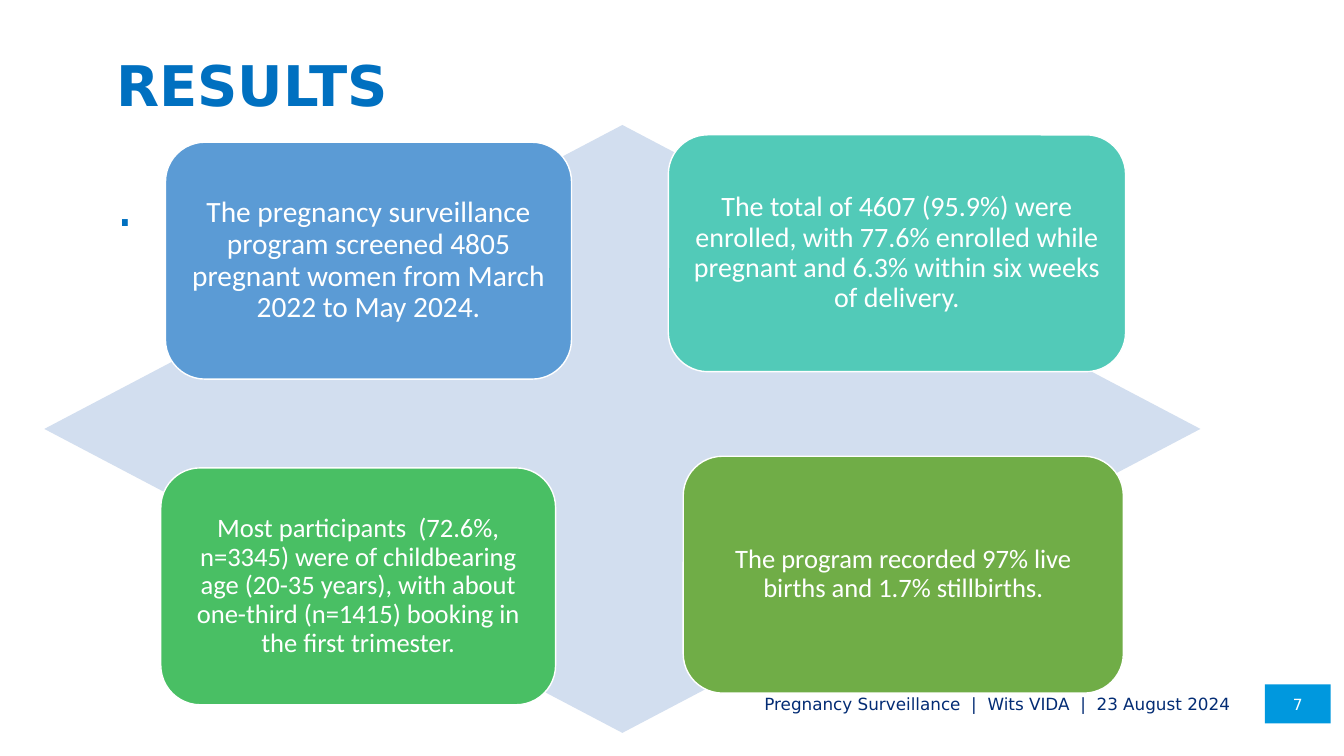
from dataclasses import dataclass

from pptx import Presentation
from pptx.dml.color import RGBColor
from pptx.enum.shapes import MSO_SHAPE
from pptx.enum.text import MSO_ANCHOR, MSO_AUTO_SIZE, PP_ALIGN
from pptx.util import Pt


@dataclass(frozen=True)
class Theme:
    heading_font: str = "DejaVu Sans"
    card_font: str = "Calibri"
    title: str = "0070C0"
    footer: str = "032C74"
    number_fill: str = "0098DE"
    diamond: str = "D2DEEF"
    white: str = "FFFFFF"
    title_size: float = 40
    footer_size: float = 12
    number_size: float = 11


THEME = Theme()

# Offset from the diamond's corner, width, fill, text size, wording
CARDS = [
    (86.5, 12.3, 290, "5B9BD5", 21,
     "The pregnancy surveillance program screened 4805 pregnant women "
     "from March 2022 to May 2024."),
    (445.7, 7, 326.6, "52CAB8", 20,
     "The total of 4607 (95.9%) were enrolled, with 77.6% enrolled while "
     "pregnant and 6.3% within six weeks of delivery."),
    (83.2, 244.9, 282, "49BF64", 19,
     "Most participants  (72.6%, n=3345) were of childbearing age "
     "(20-35 years), with about one-third (n=1415) booking in the first "
     "trimester."),
    (456.3, 236.6, 314.4, "70AD47", 19,
     "The program recorded 97% live births and 1.7% stillbirths."),
]
CARD_HEIGHT = 169.2


def write(frame, text, *, size, color, font=THEME.heading_font, bold=False,
          align=PP_ALIGN.LEFT, anchor=MSO_ANCHOR.MIDDLE, inset=0,
          line_spacing=1.0, space_before=0, append=False):
    """Fill a text frame with one paragraph, or append one to it."""
    frame.word_wrap = True
    frame.auto_size = MSO_AUTO_SIZE.NONE
    frame.vertical_anchor = anchor
    frame.margin_left = frame.margin_right = Pt(inset)
    frame.margin_top = frame.margin_bottom = Pt(inset)
    paragraph = frame.add_paragraph() if append else frame.paragraphs[0]
    paragraph.alignment = align
    paragraph.line_spacing = line_spacing
    paragraph.space_before = Pt(space_before)
    run = paragraph.add_run()
    run.text = text
    run.font.name = font
    run.font.size = Pt(size)
    run.font.bold = bold
    run.font.color.rgb = RGBColor.from_string(color)


def add_block(slide, preset, box, fill, outline=None):
    block = slide.shapes.add_shape(preset, *map(Pt, box))
    block.shadow.inherit = False
    block.fill.solid()
    block.fill.fore_color.rgb = RGBColor.from_string(fill)
    if outline:
        block.line.color.rgb = RGBColor.from_string(outline)
        block.line.width = Pt(1)
    else:
        block.line.fill.background()
    return block


def place_title(slide, box):
    title = slide.shapes.title
    title.left, title.top, title.width, title.height = map(Pt, box)
    style = dict(size=THEME.title_size, color=THEME.title,
                 anchor=MSO_ANCHOR.TOP, line_spacing=0.9)
    write(title.text_frame, "RESULTS", bold=True, **style)
    write(title.text_frame, ".", space_before=42, append=True, **style)


def add_footer(slide, box):
    """Place the footer line, with the slide number at the right end."""
    left, top, width, height = box
    number_width = 47
    gap = 24.5
    number_left = left + width - number_width
    number = add_block(slide, MSO_SHAPE.RECTANGLE,
                       (number_left, top, number_width, height),
                       THEME.number_fill)
    write(number.text_frame, "7", size=THEME.number_size, color=THEME.white,
          align=PP_ALIGN.CENTER)
    caption_box = (left, top, width - number_width - gap, height)
    caption = slide.shapes.add_textbox(*map(Pt, caption_box))
    write(caption.text_frame,
          "Pregnancy Surveillance  |  Wits VIDA  |  23 August 2024",
          size=THEME.footer_size, color=THEME.footer, align=PP_ALIGN.RIGHT)


def add_results_matrix(slide, box):
    """Place the diamond with four result cards on it."""
    left, top = box[:2]
    add_block(slide, MSO_SHAPE.DIAMOND, box, THEME.diamond)
    for across, down, width, fill, size, finding in CARDS:
        card = add_block(slide, MSO_SHAPE.ROUNDED_RECTANGLE,
                         (left + across, top + down, width, CARD_HEIGHT),
                         fill, outline=THEME.white)
        write(card.text_frame, finding, size=size, color=THEME.white,
              font=THEME.card_font, align=PP_ALIGN.CENTER, inset=6,
              line_spacing=0.9)


def main():
    deck = Presentation()
    deck.slide_width, deck.slide_height = Pt(960), Pt(540)
    slide = deck.slides.add_slide(deck.slide_layouts[5])
    place_title(slide, (83, 41.8, 811, 32.4))
    add_footer(slide, (480, 488.8, 470.6, 28))
    add_results_matrix(slide, (31.7, 89.3, 825.8, 434.2))
    deck.save("out.pptx")


if __name__ == "__main__":
    main()
